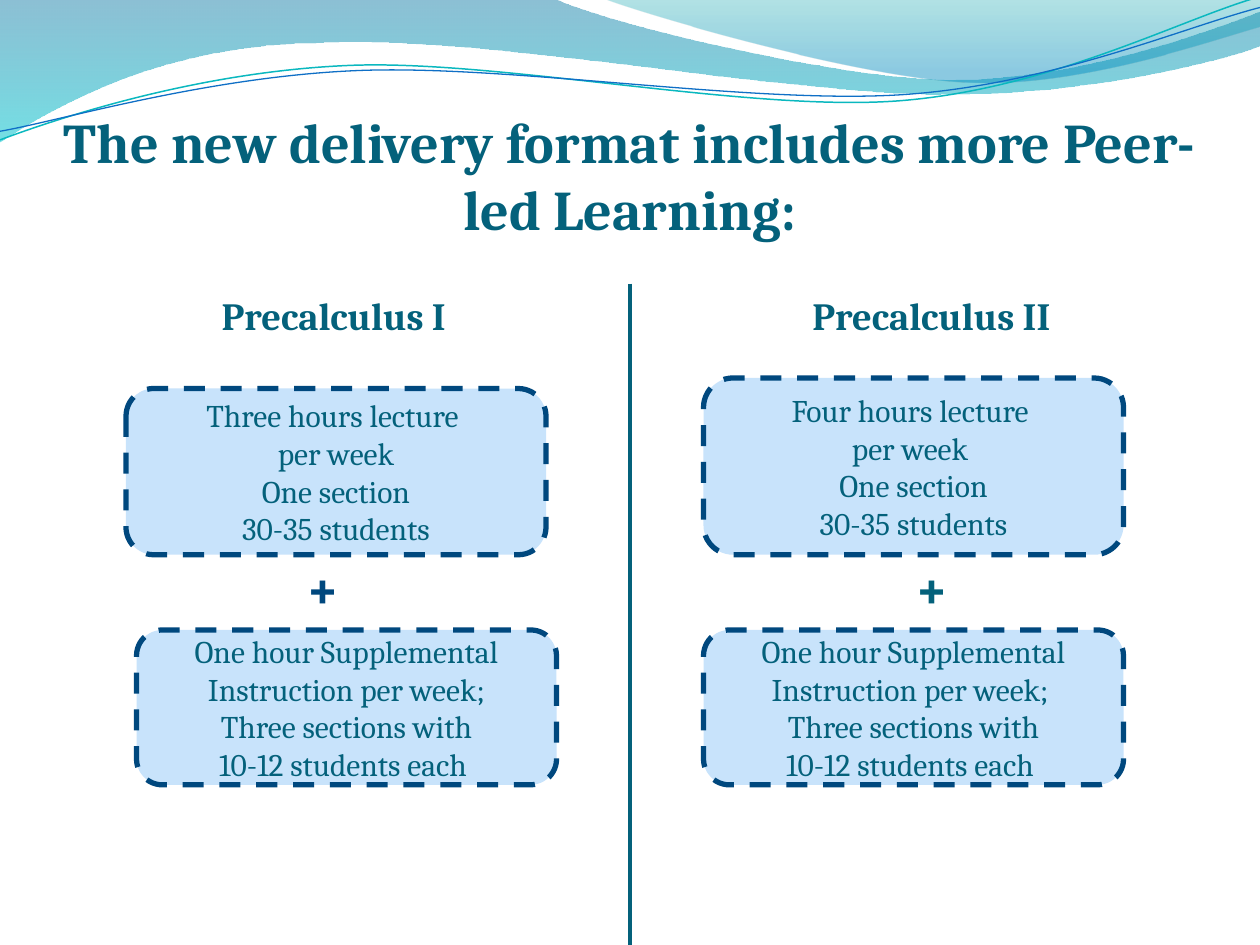
"""Build the slide on the peer-led precalculus delivery format."""
from lxml import etree
from pptx import Presentation
from pptx.dml.color import RGBColor
from pptx.enum.dml import MSO_LINE
from pptx.enum.shapes import MSO_CONNECTOR, MSO_SHAPE
from pptx.enum.text import MSO_ANCHOR, MSO_AUTO_SIZE, PP_ALIGN
from pptx.oxml.ns import qn
from pptx.util import Pt

DASH = MSO_LINE.DASH
STRAIGHT = MSO_CONNECTOR.STRAIGHT
ROUNDED = MSO_SHAPE.ROUNDED_RECTANGLE
TOP, MIDDLE, BOTTOM = MSO_ANCHOR.TOP, MSO_ANCHOR.MIDDLE, MSO_ANCHOR.BOTTOM
LEFT, CENTER = PP_ALIGN.LEFT, PP_ALIGN.CENTER
NO_FIT = MSO_AUTO_SIZE.NONE

FONT = "Cambria"
COLORS = {
    "text": "04617B", "navy": "00487E", "box": "C8E3FB",
    "ribbon_top": "0074A1", "ribbon_base": "00C6CF",
    "veil_top": "00A1A9", "veil_base": "008BBF",
    "teal_line": "0AB8BF", "blue_line": "0F6FC6",
}
CURVE_TILT = 357.3

RIBBON = [
    [(0, -0.7)], [(316.8, -0.7)],
    [(342.7, 12.2), (478, 45.4), (545.8, 45.4)],
    [(614.2, 45.4), (689.8, 18.7), (720, 6.5)],
    [(720.7, 25.9)],
    [(707.8, 31.7), (626.4, 54.7), (537.1, 54)],
    [(447.8, 54), (275, 20.2), (185, 24.5)],
    [(92.9, 25.2), (33.1, 59.8), (-0.7, 81.4)],
]
VEIL = [
    [(344.9, -0.7)],
    [(366.5, 7.9), (491, 44.6), (553.7, 46.8)],
    [(616.3, 49.7), (691.9, 23), (720, 15.1)],
    [(720, 0)],
]
TEAL_LINE = [
    [(-1.4, 63)],
    [(33.8, 51.7), (114.1, 29.4), (199.8, 29.9)],
    [(284.8, 30.3), (425.9, 67.3), (512.5, 64.9)],
    [(599.1, 62.4), (676.5, 25.7), (720.2, 15.5)],
]
BLUE_LINE = [
    [(-1.1, 58)],
    [(32.9, 53.8), (118.3, 32.5), (204.1, 33)],
    [(290.6, 33.4), (428.9, 63.1), (515.5, 61.4)],
    [(601.4, 59.6), (678.4, 30.1), (721.4, 21.3)],
]

LECTURE_SECTION = "One section\n30-35 students"
SUPPLEMENT_SECTIONS = "Three sections with\n10-12 students each "
COURSES = [
    {"name": "Precalculus I", "heading_left": 30, "plus_left": 168,
     "plus_color": "navy", "lecture_box": (72, 222, 240, 95),
     "lecture": "Three hours lecture \vper week\n" + LECTURE_SECTION,
     "supplement": "One hour Supplemental Instruction per week;\n",
     "supplement_left": 78},
    {"name": "Precalculus II", "heading_left": 371.5, "plus_left": 516,
     "plus_color": "text", "lecture_box": (402, 216, 240, 101),
     "lecture": "Four hours lecture \vper week \n" + LECTURE_SECTION,
     "supplement": "One hour Supplemental Instruction per week; \n",
     "supplement_left": 402},
]


def rgb(name):
    """Return the named colour."""
    return RGBColor.from_string(COLORS[name])


def write(frame, text, size=18, color="text", bold=False, align=CENTER,
          anchor=MIDDLE, insets=(7.2, 3.6, 7.2, 3.6)):
    """Fill a text frame, one paragraph for each line of text."""
    frame.word_wrap = True
    frame.auto_size = NO_FIT
    frame.vertical_anchor = anchor
    (frame.margin_left, frame.margin_top,
     frame.margin_right, frame.margin_bottom) = map(Pt, insets)
    for index, line in enumerate(text.split("\n")):
        paragraph = frame.add_paragraph() if index else frame.paragraphs[0]
        paragraph.text = line
        paragraph.alignment = align
        for run in paragraph.runs:
            run.font.name = FONT
            run.font.size = Pt(size)
            run.font.bold = bold
            run.font.color.rgb = rgb(color)


class Deck:
    """Hold the presentation style and the current slide."""

    def __init__(self):
        """Open a 4:3 presentation with one title-only slide."""
        self.presentation = Presentation()
        self.presentation.slide_width = Pt(720)
        self.presentation.slide_height = Pt(540)
        layout = self.presentation.slide_layouts[5]
        self.slide = self.presentation.slides.add_slide(layout)
        self.shapes = self.slide.shapes

    def outline(self, segments, close):
        """Draw a freeform of straight and cubic segments."""
        start, *corners = [(Pt(x), Pt(y)) for part in segments
                           for x, y in part]
        builder = self.shapes.build_freeform(*start)
        builder.add_line_segments(corners, close=close)
        shape = builder.convert_to_shape()
        shape.shadow.inherit = False
        steps = iter(list(shape._element.iter(qn("a:lnTo"))))
        for segment in segments[1:]:
            group = [next(steps) for _ in segment]
            if len(group) == 3:
                cubic = etree.Element(qn("a:cubicBezTo"))
                group[0].addprevious(cubic)
                for step in group:
                    cubic.append(step[0])
                    step.getparent().remove(step)
        return shape

    def wave(self, segments, stops):
        """Draw a translucent wave shaded from top to bottom."""
        shape = self.outline(segments, True)
        shape.line.fill.background()
        shape.fill.gradient()
        shape.fill.gradient_angle = 270
        for stop, (position, color, opacity) in zip(
                shape.fill.gradient_stops, stops):
            stop.position = position
            stop.color.rgb = rgb(color)
            for value in shape._element.spPr.iter(qn("a:srgbClr")):
                if value.get("val") == COLORS[color]:
                    etree.SubElement(value, qn("a:alpha"),
                                     val=str(opacity * 1000))

    def curve(self, segments, color, width):
        """Draw a tilted open line."""
        shape = self.outline(segments, False)
        shape.rotation = CURVE_TILT
        shape.fill.background()
        shape.line.color.rgb = rgb(color)
        shape.line.width = Pt(width)

    def title(self, text, box):
        """Place and fill the title placeholder."""
        title = self.shapes.title
        title.left, title.top, title.width, title.height = map(Pt, box)
        write(title.text_frame, text, size=32, bold=True, anchor=BOTTOM,
              insets=(0, 3.6, 0, 0))

    def label(self, text, box, **style):
        """Add a text box."""
        label = self.shapes.add_textbox(*map(Pt, box))
        write(label.text_frame, text, bold=True, **style)

    def card(self, text, box):
        """Add a dashed rounded box with centred text."""
        card = self.shapes.add_shape(ROUNDED, *map(Pt, box))
        card.shadow.inherit = False
        card.fill.solid()
        card.fill.fore_color.rgb = rgb("box")
        card.line.color.rgb = rgb("navy")
        card.line.width = Pt(3)
        card.line.dash_style = DASH
        write(card.text_frame, text)

    def divider(self, x, top, bottom):
        """Add a vertical line."""
        divider = self.shapes.add_connector(
            STRAIGHT, Pt(x), Pt(top), Pt(x), Pt(bottom))
        divider.line.color.rgb = rgb("text")
        divider.line.width = Pt(2.25)
        etree.SubElement(divider._element.spPr, qn("a:effectLst"))


def main():
    """Build and save the slide."""
    deck = Deck()
    deck.wave(RIBBON, [(0, "ribbon_top", 45), (1, "ribbon_base", 55)])
    deck.wave(VEIL, [(0, "veil_top", 30), (0.8, "veil_base", 45)])
    deck.curve(TEAL_LINE, "teal_line", 0.85)
    deck.curve(BLUE_LINE, "blue_line", 0.75)
    deck.title("The new delivery format includes more Peer-led Learning:",
               (30, 54, 660, 84))
    deck.divider(360, 162, 540)
    for course in COURSES:
        deck.label(course["name"], (course["heading_left"], 162, 318, 36),
                   size=22, insets=(7.2, 0, 3.6, 0))
        deck.card(course["lecture"], course["lecture_box"])
        deck.label("+", (course["plus_left"], 312, 36, 46), size=32,
                   color=course["plus_color"], align=LEFT, anchor=TOP)
        deck.card(course["supplement"] + SUPPLEMENT_SECTIONS,
                  (course["supplement_left"], 360, 240, 88.5))
    deck.presentation.save("out.pptx")


if __name__ == "__main__":
    main()
